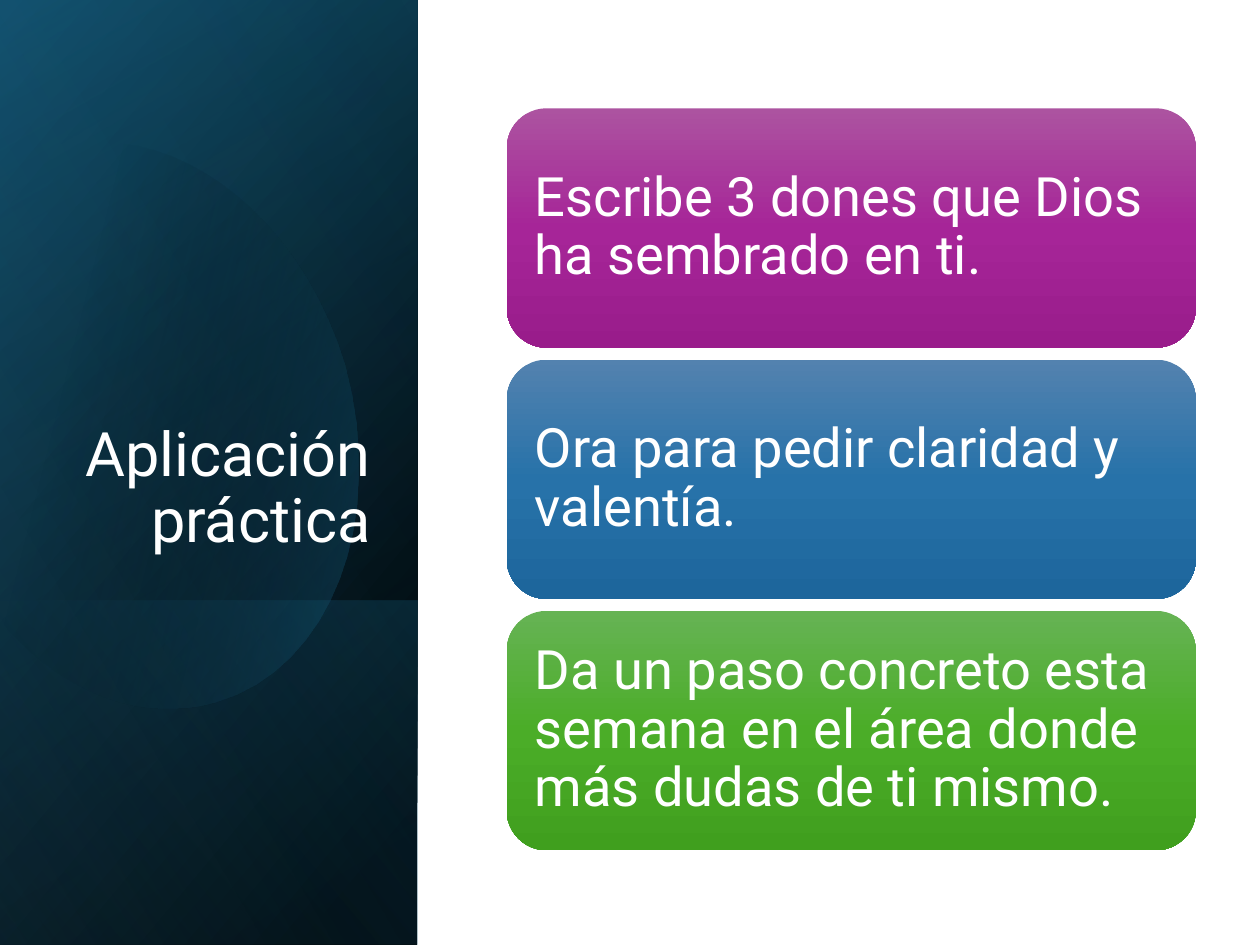
"""Build the slide "Aplicación práctica": a dark title panel beside three gradient cards."""
from lxml.etree import SubElement
from pptx import Presentation
from pptx.dml.color import RGBColor
from pptx.enum.shapes import MSO_SHAPE
from pptx.enum.text import MSO_ANCHOR, PP_ALIGN
from pptx.oxml.ns import qn
from pptx.util import Pt

THEME = {
    "font": "Roboto",
    "text": RGBColor(255, 255, 255),
    "title_size": Pt(35),
    "card_size": Pt(31),
    "base": [(8, "000000", 100), (100, "104862", 100)],
    "glow": [(0, "000000", 0), (99, "156082", 46)],
    "foot": [(2, "156082", 29), (100, "000000", 30)],
    "blob": [(29, "000000", 0), (100, "156082", 43)],
    "sheen": [(0, "000000", 0), (99, "46B1E1", 11)],
    "purple": [(0, "AC53A0", 100), (50, "A62598", 100), (100, "991C8B", 100)],
    "blue": [(0, "5382AF", 100), (50, "2772A9", 100), (100, "1D669C", 100)],
    "green": [(0, "66B354", 100), (50, "4BAD28", 100), (100, "409F1E", 100)],
}


def paint(shape, stops, angle):
    """Fill a shape with gradient stops of (position, colour, opacity)."""
    shape.shadow.inherit = False
    shape.line.fill.background()
    shape.fill.gradient()
    gradient = shape._element.spPr.find(qn("a:gradFill"))
    gradient.set("rotWithShape", "1")
    for child in list(gradient):
        gradient.remove(child)
    stop_list = SubElement(gradient, qn("a:gsLst"))
    for position, colour, opacity in stops:
        stop = SubElement(stop_list, qn("a:gs"), pos=str(position * 1000))
        tint = SubElement(stop, qn("a:srgbClr"), val=colour)
        if opacity < 100:
            SubElement(tint, qn("a:alpha"), val=str(opacity * 1000))
    SubElement(gradient, qn("a:lin"), ang=str(angle * 60000), scaled="0")


def write(text, *, place, size, anchor, align=PP_ALIGN.LEFT, inset=(Pt(7.2), Pt(3.6))):
    """Add a wrapped text box to the page."""
    box = page.shapes.add_textbox(*place)
    frame = box.text_frame
    frame.word_wrap = True
    frame.vertical_anchor = anchor
    frame.margin_left = frame.margin_right = inset[0]
    frame.margin_top = frame.margin_bottom = inset[1]
    para = frame.paragraphs[0]
    para.alignment = align
    para.line_spacing = 0.9
    span = para.add_run()
    span.text = text
    span.font.name = THEME["font"]
    span.font.size = size
    span.font.color.rgb = THEME["text"]


deck = Presentation()
deck.slide_width, deck.slide_height = Pt(720), Pt(540)
page = deck.slides.add_slide(deck.slide_layouts[6])

panel_width = Pt(238.5)
panel_layers = [
    ("base", Pt(0), Pt(540), 50),
    ("glow", Pt(0), Pt(540), 30),
    ("foot", Pt(343), Pt(197), 130),
    ("blob", None, None, 14),
    ("sheen", Pt(0), Pt(540), 120),
]
blob_start = (69, 82)
blob_curves = [
    [(123, 88), (176, 138), (197, 209)],
    [(221, 297), (189, 382), (123, 401)],
    [(82, 413), (38, 396), (5, 360)],
    [(5, 360), (-2, 351), (-2, 351)],
    [(-2, 351), (-18, 120), (-18, 120)],
    [(-18, 120), (-11, 111), (-11, 111)],
    [(1, 99), (16, 90), (32, 85)],
    [(45, 81), (57, 81), (69, 82)],
]
curve_steps = 16

for name, top, height, angle in panel_layers:
    if name == "blob":
        points = []
        start = blob_start
        for first, second, end in blob_curves:
            for step in range(1, curve_steps + 1):
                t = step / curve_steps
                weights = ((1 - t) ** 3, 3 * t * (1 - t) ** 2, 3 * t * t * (1 - t), t ** 3)
                corners = (start, first, second, end)
                points.append(tuple(
                    Pt(sum(w * corner[axis] for w, corner in zip(weights, corners)))
                    for axis in (0, 1)
                ))
            start = end
        outline = page.shapes.build_freeform(Pt(blob_start[0]), Pt(blob_start[1]))
        outline.add_line_segments(points, close=True)
        layer = outline.convert_to_shape()
    else:
        left = (panel_width - height) // 2
        turned_top = top + (height - panel_width) // 2
        layer = page.shapes.add_shape(MSO_SHAPE.RECTANGLE, left, turned_top, height, panel_width)
        layer.rotation = 90
        layer._element.spPr.find(qn("a:xfrm")).set("flipH", "1")
    paint(layer, THEME[name], angle)

write(
    "Aplicación práctica",
    place=(Pt(34.5), Pt(132.5), Pt(184.5), Pt(188.5)),
    size=THEME["title_size"],
    anchor=MSO_ANCHOR.BOTTOM,
    align=PP_ALIGN.RIGHT,
)

card_left, card_top, card_width, card_height = Pt(289.6), Pt(61.9), Pt(393.8), Pt(136.8)
card_gap, card_padding = Pt(6.8), Pt(6.7)
cards = [
    ("purple", "Escribe 3 dones que Dios ha sembrado en ti."),
    ("blue", "Ora para pedir claridad y valentía."),
    ("green", "Da un paso concreto esta semana en el área donde más dudas de ti mismo."),
]
for row, (name, text) in enumerate(cards):
    top = card_top + row * (card_height + card_gap)
    card = page.shapes.add_shape(
        MSO_SHAPE.ROUNDED_RECTANGLE, card_left, top, card_width, card_height
    )
    paint(card, THEME[name], 90)
    write(
        text,
        place=(card_left + card_padding, top + card_padding,
               card_width - 2 * card_padding, card_height - 2 * card_padding),
        size=THEME["card_size"],
        anchor=MSO_ANCHOR.MIDDLE,
        inset=(Pt(9.4), Pt(9.4)),
    )

deck.save("out.pptx")
